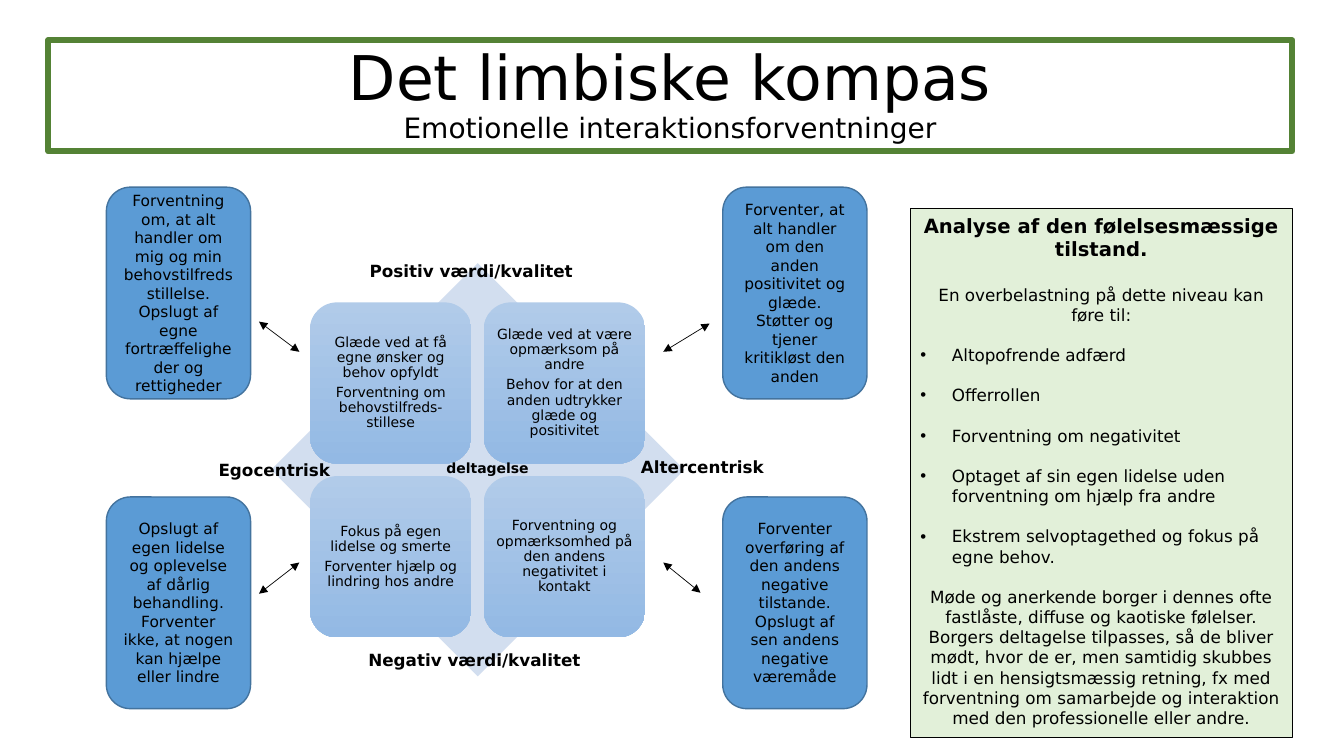
from lxml import etree
from pptx import Presentation
from pptx.dml.color import RGBColor
from pptx.enum.shapes import MSO_CONNECTOR, MSO_SHAPE
from pptx.enum.text import MSO_ANCHOR, MSO_AUTO_SIZE, PP_ALIGN
from pptx.oxml.ns import qn
from pptx.util import Pt

CENTER, LEFT = PP_ALIGN.CENTER, PP_ALIGN.LEFT
MIDDLE, TOP = MSO_ANCHOR.MIDDLE, MSO_ANCHOR.TOP
NO_AUTOFIT = MSO_AUTO_SIZE.NONE
STRAIGHT = MSO_CONNECTOR.STRAIGHT
DIAMOND, ROUNDED = MSO_SHAPE.DIAMOND, MSO_SHAPE.ROUNDED_RECTANGLE

FONT = "DejaVu Sans"
COLORS = {
    "text": "000000", "frame": "548235", "diamond": "D2DEEF",
    "tile_top": "B1CBE9", "tile_bottom": "93B9E4",
    "card": "5B9BD5", "card_line": "43739E", "panel": "E2F0D9",
}

TILE_SIZE, TILE_STEP, TILE_LEFT, TILE_TOP = 115.2, 124.1, 221.5, 216
TILES = [
    ["Glæde ved at få egne ønsker og behov opfyldt",
     "Forventning om behovstilfreds-stillese"],
    ["Glæde ved at være opmærksom på andre",
     "Behov for at den anden udtrykker glæde og positivitet"],
    ["Fokus på egen lidelse og smerte",
     "Forventer hjælp og lindring hos andre"],
    ["Forventning og opmærksomhed på den andens negativitet i kontakt"],
]
CARD_LEFTS, CARD_TOPS = (76, 516.3), (133.7, 355)
CARDS = [
    ["Forventning om, at alt handler om mig og min behovstilfredsstillelse.",
     "Opslugt af egne fortræffeligheder og rettigheder"],
    ["Forventer, at alt handler om den anden positivitet og glæde.",
     "Støtter og tjener kritikløst den anden"],
    ["Opslugt af egen lidelse og oplevelse af dårlig behandling.",
     "Forventer ikke, at nogen kan hjælpe eller lindre"],
    ["Forventer overføring af den andens negative tilstande.",
     "Opslugt af sen andens negative væremåde"],
]
LABELS = [
    ("Egocentrisk", 12, (149, 324.7, 101, 22)),
    ("Altercentrisk", 12, (450.7, 322.6, 114.5, 22)),
    ("Positiv værdi/kvalitet", 12, (257, 182.9, 225, 22)),
    ("Negativ værdi/kvalitet", 12, (256, 460.8, 210, 22)),
    ("deltagelse", 10, (311.8, 324.7, 102, 41)),
]
ARROWS = [
    (185, 229.7, 213.8, 251.3), (473.8, 251.3, 506.9, 231.1),
    (213.8, 401.8, 185, 424.1), (473.8, 401.8, 500.4, 423.4),
]
PANEL_HEADING = "Analyse af den følelsesmæssige tilstand."
PANEL_INTRO = "En overbelastning på dette niveau kan føre til:"
PANEL_BULLETS = [
    "Altopofrende adfærd",
    "Offerrollen",
    "Forventning om negativitet",
    "Optaget af sin egen lidelse uden forventning om hjælp fra andre",
    "Ekstrem selvoptagethed og fokus på egne behov.",
]
PANEL_CLOSING = (
    "Møde og anerkende borger i dennes ofte fastlåste, diffuse og kaotiske "
    "følelser. Borgers deltagelse tilpasses, så de bliver mødt, hvor de er, "
    "men samtidig skubbes lidt i en hensigtsmæssig retning, fx med "
    "forventning om samarbejde og interaktion med den professionelle eller "
    "andre."
)


def color(name):
    return RGBColor.from_string(COLORS[name])


def apply_format(target, **values):
    for name, value in values.items():
        setattr(target, name, value)


def place(shape, left, top, width, height):
    apply_format(shape, left=Pt(left), top=Pt(top),
                 width=Pt(width), height=Pt(height))


def set_outline(shape, name, width):
    shape.line.color.rgb = color(name)
    shape.line.width = Pt(width)


def set_frame(shape, anchor):
    apply_format(shape.text_frame, word_wrap=True, auto_size=NO_AUTOFIT,
                 vertical_anchor=anchor)


def add_run(paragraph, text, size, bold=False):
    run = paragraph.add_run()
    run.text = text
    apply_format(run.font, name=FONT, size=Pt(size), bold=bold)
    run.font.color.rgb = color("text")


def write_paragraphs(frame, texts, size, bold=False, **layout):
    for index, text in enumerate(texts):
        paragraph = frame.add_paragraph() if index else frame.paragraphs[0]
        apply_format(paragraph, **layout)
        add_run(paragraph, text, size, bold)


def set_bullet(paragraph, bulleted):
    properties = paragraph._p.get_or_add_pPr()
    indent = Pt(22.5) if bulleted else 0
    properties.set("marL", str(indent))
    properties.set("indent", str(-indent))
    if bulleted:
        etree.SubElement(properties, qn("a:buChar")).set("char", "•")
    else:
        etree.SubElement(properties, qn("a:buNone"))


def fill_title(title):
    place(title, 34.5, 28.8, 888.5, 79.2)
    set_outline(title, "frame", 4.5)
    set_frame(title, MIDDLE)
    paragraph = title.text_frame.paragraphs[0]
    apply_format(paragraph, alignment=CENTER, line_spacing=0.9)
    add_run(paragraph, "Det limbiske kompas", 44)
    paragraph.add_line_break()
    add_run(paragraph, "Emotionelle interaktionsforventninger", 20)


def fill_panel(panel):
    place(panel, 650.2, 149, 272.9, 378)
    panel.fill.solid()
    panel.fill.fore_color.rgb = color("panel")
    set_outline(panel, "text", 1)
    set_frame(panel, TOP)
    rows = [(PANEL_HEADING, 14, 0, False), (PANEL_INTRO, 12, 16.8, False)]
    rows += [(text, 12, 14.4, True) for text in PANEL_BULLETS]
    rows.append((PANEL_CLOSING, 12, 14.4, False))
    frame = panel.text_frame
    for index, (text, size, gap, bulleted) in enumerate(rows):
        paragraph = frame.add_paragraph() if index else frame.paragraphs[0]
        apply_format(paragraph, alignment=LEFT if bulleted else CENTER,
                     space_before=Pt(gap))
        set_bullet(paragraph, bulleted)
        add_run(paragraph, text, size, bold=index == 0)


def add_plain_shape(slide, kind, box, fill):
    shape = slide.shapes.add_shape(kind, *map(Pt, box))
    shape.shadow.inherit = False
    shape.fill.solid()
    shape.fill.fore_color.rgb = color(fill)
    shape.line.fill.background()
    return shape


def add_tile(slide, left, top, texts):
    tile = add_plain_shape(slide, ROUNDED, (left, top, TILE_SIZE, TILE_SIZE),
                           "tile_top")
    tile.fill.gradient()
    tile.fill.gradient_angle = 270
    for stop, name in zip(tile.fill.gradient_stops,
                          ("tile_top", "tile_bottom")):
        stop.color.rgb = color(name)
    set_frame(tile, MIDDLE)
    for side in ("left", "right", "top", "bottom"):
        setattr(tile.text_frame, f"margin_{side}", Pt(3))
    write_paragraphs(tile.text_frame, texts, 10, alignment=CENTER,
                     line_spacing=0.9, space_after=Pt(3.5))


def add_card(slide, left, top, texts):
    card = add_plain_shape(slide, ROUNDED, (left, top, 103, 151.2), "card")
    set_outline(card, "card_line", 1)
    set_frame(card, MIDDLE)
    write_paragraphs(card.text_frame, texts, 11, alignment=CENTER)


def add_label(slide, text, size, box):
    label = slide.shapes.add_textbox(*map(Pt, box))
    set_frame(label, TOP)
    write_paragraphs(label.text_frame, [text], size, bold=True)


def add_double_arrow(slide, points):
    arrow = slide.shapes.add_connector(STRAIGHT, *map(Pt, points))
    set_outline(arrow, "text", 0.5)
    line = arrow.line._get_or_add_ln()
    for end in ("a:headEnd", "a:tailEnd"):
        etree.SubElement(line, qn(end)).set("type", "triangle")
    etree.SubElement(arrow._element.spPr, qn("a:effectLst"))


def main():
    presentation = Presentation()
    presentation.slide_width, presentation.slide_height = Pt(960), Pt(540)
    slide = presentation.slides.add_slide(presentation.slide_layouts[1])
    fill_title(slide.shapes.title)
    fill_panel(slide.placeholders[1])
    add_plain_shape(slide, DIAMOND, (193.7, 188, 295.2, 295.2), "diamond")
    for index, texts in enumerate(TILES):
        row, column = divmod(index, 2)
        add_tile(slide, TILE_LEFT + column * TILE_STEP,
                 TILE_TOP + row * TILE_STEP, texts)
    for index, texts in enumerate(CARDS):
        row, column = divmod(index, 2)
        add_card(slide, CARD_LEFTS[column], CARD_TOPS[row], texts)
    for label in LABELS:
        add_label(slide, *label)
    for points in ARROWS:
        add_double_arrow(slide, points)
    presentation.save("out.pptx")


if __name__ == "__main__":
    main()
